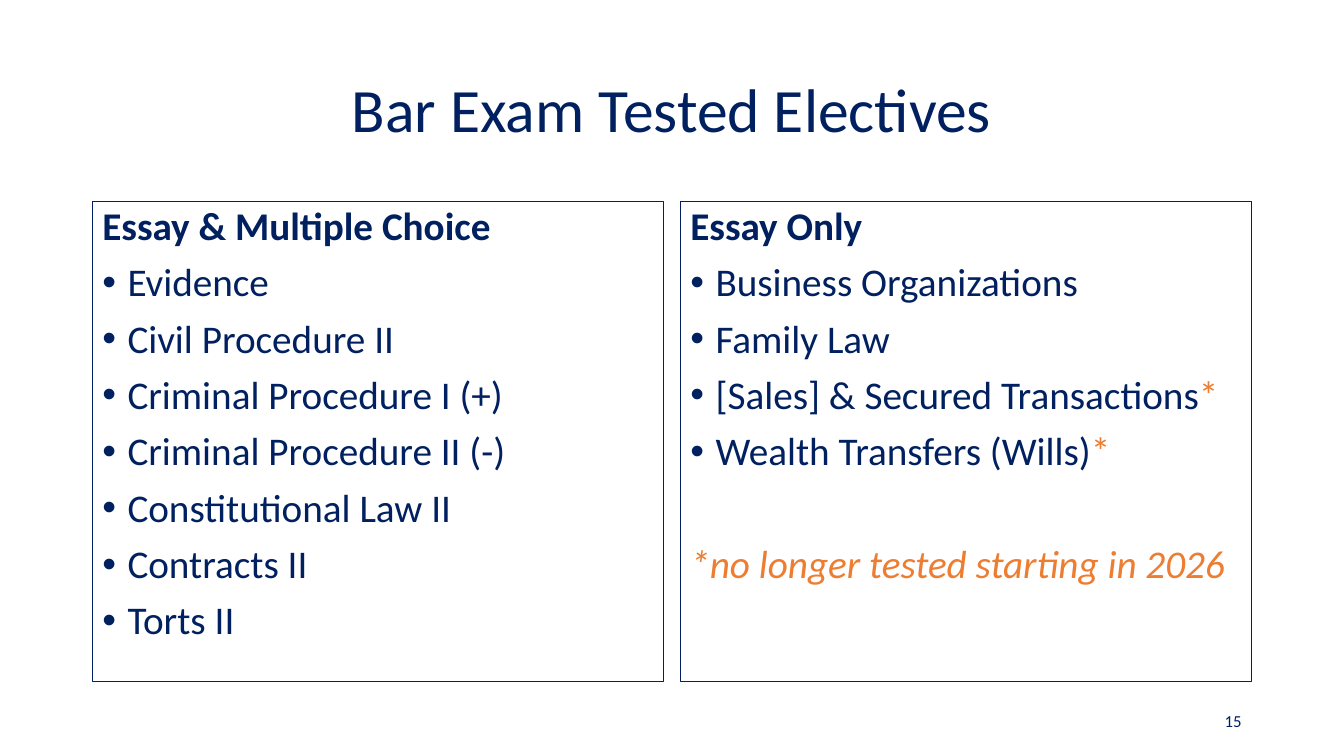
import pptx
import pptx.util
import pptx.dml.color
import pptx.enum.shapes
import pptx.enum.text
from lxml import etree

Pt = pptx.util.Pt
RGBColor = pptx.dml.color.RGBColor
ALIGN = pptx.enum.text.PP_ALIGN
ANCHOR = pptx.enum.text.MSO_ANCHOR

# Content
TITLE = "Bar Exam Tested Electives"
PAGE = "15"
MARK = "*"
COLUMNS = [
    {"heading": "Essay & Multiple Choice",
     "courses": ["Evidence", "Civil Procedure II", "Criminal Procedure I (+)",
                 "Criminal Procedure II (-)", "Constitutional Law II",
                 "Contracts II", "Torts II"],
     "note": None},
    {"heading": "Essay Only",
     "courses": ["Business Organizations", "Family Law",
                 "[Sales] & Secured Transactions*", "Wealth Transfers (Wills)*"],
     "note": "*no longer tested starting in 2026"},
]

# Style and layout, lengths in px
NAVY = RGBColor(0x00, 0x20, 0x60)
ORANGE = RGBColor(0xED, 0x7D, 0x31)
FONT = "Calibri"
PX = 9525
LEFT, WIDTH, GAP = 88, 1104, 16
BOX_TOP, BOX_H = 192, 457
BOX_W = (WIDTH - GAP) // len(COLUMNS)
INDENT = 24
BODY = {"line_spacing": 0.9, "space_before": Pt(10), "alignment": ALIGN.LEFT}
NOTE = {**BODY, "space_before": Pt(50)}


def px(*lengths):
    return [n * PX for n in lengths]


def set_all(target, values):
    for name, value in values.items():
        setattr(target, name, value)


def add_run(p, text, size, color=NAVY, **style):
    r = p.add_run()
    r.text = text
    set_all(r.font, {"name": FONT, "size": Pt(size), **style})
    r.font.color.rgb = color


def add_bullet(p):
    pPr = p._p.get_or_add_pPr()
    pPr.set("marL", str(INDENT * PX))
    pPr.set("indent", str(-INDENT * PX))
    for tag, attr, value in (("a:buFont", "typeface", "Arial"),
                             ("a:buChar", "char", "•")):
        etree.SubElement(pPr, pptx.oxml.ns.qn(tag)).set(attr, value)


def add_label(s, box, text, size, **paragraph):
    tf = s.shapes.add_textbox(*px(*box)).text_frame
    set_all(tf, {"word_wrap": True, "vertical_anchor": ANCHOR.MIDDLE})
    p = tf.paragraphs[0]
    set_all(p, paragraph)
    add_run(p, text, size)


def add_column(s, left, column):
    sp = s.shapes.add_shape(pptx.enum.shapes.MSO_SHAPE.RECTANGLE,
                            *px(left, BOX_TOP, BOX_W, BOX_H))
    sp.shadow.inherit = False
    sp.fill.background()
    sp.line.color.rgb = NAVY
    sp.line.width = Pt(0.75)
    tf = sp.text_frame
    set_all(tf, {"word_wrap": True, "vertical_anchor": ANCHOR.TOP})

    # Heading
    p = tf.paragraphs[0]
    set_all(p, BODY)
    add_run(p, column["heading"], 28, bold=True)

    # Courses, with an orange mark where one applies
    for course in column["courses"]:
        p = tf.add_paragraph()
        set_all(p, BODY)
        add_bullet(p)
        name, mark, _ = course.partition(MARK)
        add_run(p, name, 28)
        if mark:
            add_run(p, mark, 28, ORANGE)

    # Footnote
    if column["note"]:
        p = tf.add_paragraph()
        set_all(p, NOTE)
        add_run(p, column["note"], 28, ORANGE, italic=True)


def main():
    prs = pptx.Presentation()
    prs.slide_width, prs.slide_height = px(1280, 720)
    s = prs.slides.add_slide(prs.slide_layouts[6])

    add_label(s, (LEFT, 38, WIDTH, 139), TITLE, 44,
              alignment=ALIGN.CENTER, line_spacing=0.9)
    for i, column in enumerate(COLUMNS):
        add_column(s, LEFT + i * (BOX_W + GAP), column)
    add_label(s, (904, 667, 288, 38), PAGE, 12, alignment=ALIGN.RIGHT)

    prs.save("out.pptx")


if __name__ == "__main__":
    main()
